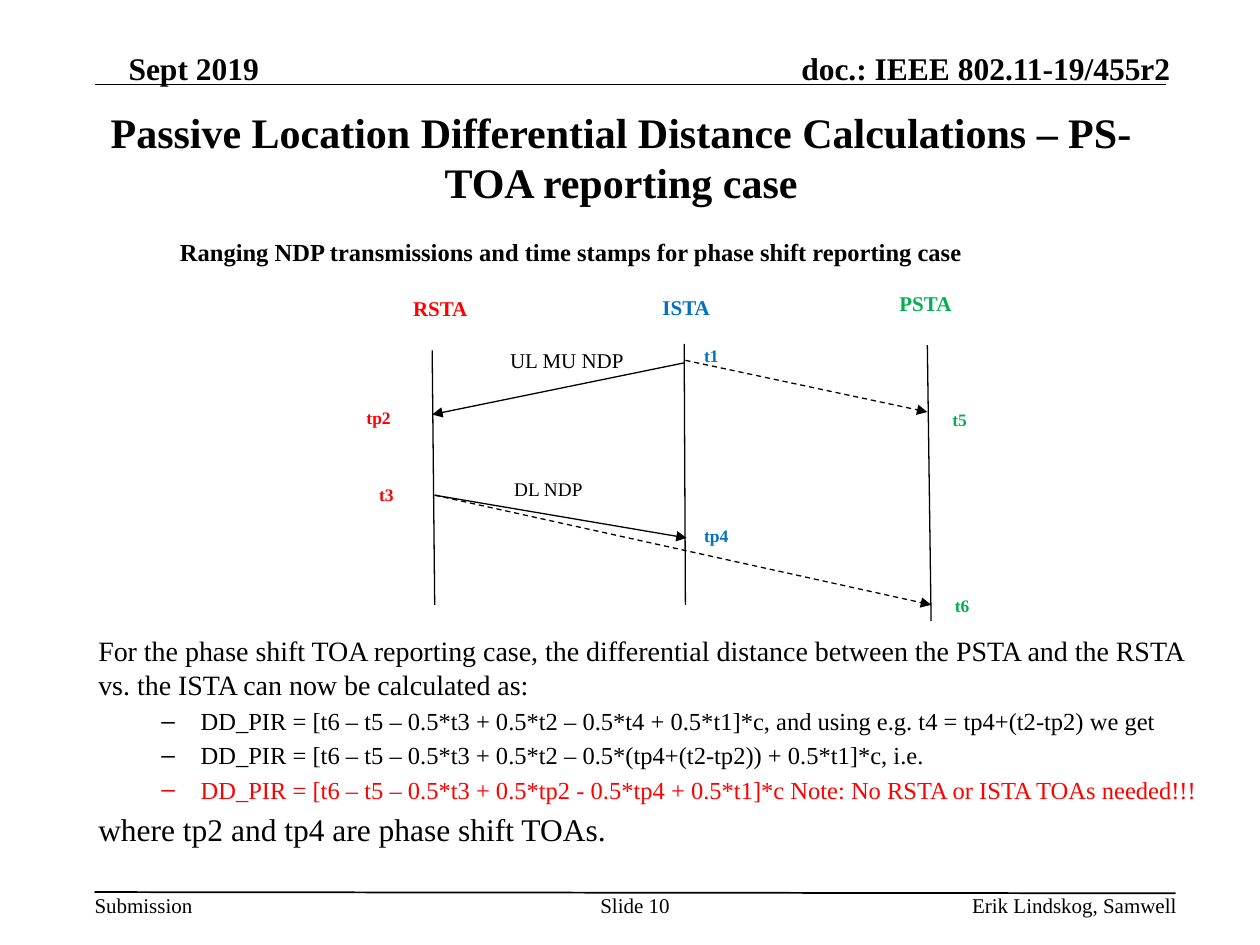
from dataclasses import dataclass

from lxml.etree import SubElement
from pptx import Presentation
from pptx.dml.color import RGBColor
from pptx.enum.dml import MSO_LINE_DASH_STYLE as Dash
from pptx.enum.shapes import MSO_CONNECTOR
from pptx.enum.text import MSO_ANCHOR as Anchor, MSO_AUTO_SIZE as AutoSize, PP_ALIGN as Align
from pptx.oxml.ns import qn
from pptx.util import Emu, Pt

PX = 9144  # EMU in one px, at 100 px to the inch


@dataclass(frozen=True)
class Theme:
    font: str = "Times New Roman"
    black: str = "000000"
    red: str = "FF0000"
    blue: str = "0070C0"
    green: str = "00B050"
    title: int = 24
    header: int = 18
    lead: int = 16
    item: int = 14
    label: int = 12
    note: int = 11
    stamp: int = 10


def write(para, words, *, size, color, bold=False, align=None):
    """Add one formatted run to a paragraph."""
    span = para.add_run()
    span.text = words
    font = span.font
    font.name, font.size, font.bold = Theme.font, Pt(size), bold
    font.color.rgb = RGBColor.from_string(color)
    if align is not None:
        para.alignment = align


class SlideBuilder:
    def __init__(self, deck, theme):
        self.theme = theme
        self.page = deck.slides.add_slide(deck.slide_layouts[1])

    def place(self, shape, at):
        shape.left, shape.top, shape.width, shape.height = (Emu(v * PX) for v in at)

    def title(self, at, words):
        box = self.page.shapes.title
        self.place(box, at)
        box.text_frame.vertical_anchor = Anchor.MIDDLE
        write(box.text_frame.paragraphs[0], words, size=self.theme.title,
              color=self.theme.black, bold=True, align=Align.CENTER)

    def body(self, at, rows):
        """Fill the body placeholder; rows are (level, words, size, color)."""
        box = self.page.placeholders[1]
        self.place(box, at)
        frame = box.text_frame
        frame.auto_size = AutoSize.NONE
        for index, (level, words, size, color) in enumerate(rows):
            para = frame.add_paragraph() if index else frame.paragraphs[0]
            para.level = level
            if level == 0:
                props = para._p.get_or_add_pPr()
                props.set("marL", "0")
                props.set("indent", "0")
                SubElement(props, qn("a:buNone"))
            write(para, words, size=size, color=color)

    def text(self, at, words, *, size, color=None, bold=False, align=Align.LEFT,
             wrap=True, insets=(10, 5, 10, 5), anchor=Anchor.TOP):
        box = self.page.shapes.add_textbox(*(Emu(v * PX) for v in at))
        frame = box.text_frame
        frame.word_wrap = wrap
        frame.vertical_anchor = anchor
        (frame.margin_left, frame.margin_top,
         frame.margin_right, frame.margin_bottom) = (Emu(v * PX) for v in insets)
        para = frame.paragraphs[0]
        write(para, words, size=size, color=color or self.theme.black, bold=bold, align=align)
        return para

    def right_tab(self, para, position):
        tabs = SubElement(para._p.get_or_add_pPr(), qn("a:tabLst"))
        SubElement(tabs, qn("a:tab"), pos=str(position * PX), algn="r")

    def line(self, start, end, *, width=0.75, dashed=False, arrow=False):
        line = self.page.shapes.add_connector(
            MSO_CONNECTOR.STRAIGHT, *(Emu(v * PX) for v in (*start, *end)))
        line.line.width = Pt(width)
        line.line.color.rgb = RGBColor.from_string(self.theme.black)
        if dashed:
            line.line.dash_style = Dash.DASH
        if arrow:
            SubElement(line.line._get_or_add_ln(), qn("a:tailEnd"), type="triangle")
        SubElement(line._element.spPr, qn("a:effectLst"))


def add_frame(slide, theme):
    """Draw the header and footer with their rules."""
    flush = (0, 0, 0, 0)
    slide.line((75, 67), (925, 67), width=1)
    slide.line((75, 708), (933, 709), width=1)
    header = slide.text((75, 39, 855, 30), "Sept 2019\tdoc.: IEEE 802.11-19/455r2",
                        size=theme.header, bold=True, insets=(27, 0, 0, 0),
                        anchor=Anchor.BOTTOM)
    slide.right_tab(header, 827)
    slide.text((75, 708, 78, 20), "Submission", size=theme.label, insets=flush, wrap=False)
    slide.text((475, 708, 58, 40), "Slide 10", size=theme.label, insets=flush,
               align=Align.CENTER)
    slide.text((586, 708, 348, 20), "Erik Lindskog, Samwell", size=theme.label,
               insets=flush, align=Align.RIGHT)


def add_sequence(slide, theme):
    """Draw the three stations, their messages and the time stamps."""
    slide.text((133, 183, 647, 34),
               "Ranging NDP transmissions and time stamps for phase shift reporting case",
               size=theme.item, bold=True, wrap=False)

    stations = (
        ("RSTA", theme.red, (318, 230), (343, 278), (345, 480),
         (("tp2", 281, 318), ("t3", 291, 379))),
        ("ISTA", theme.blue, (516, 229), (543, 273), (544, 480),
         (("t1", 549, 269), ("tp4", 549, 412))),
        ("PSTA", theme.green, (704, 226), (736, 274), (739, 493),
         (("t5", 746, 320), ("t6", 748, 467))),
    )
    for name, color, corner, top, bottom, stamps in stations:
        slide.text((*corner, 70, 30), name, size=theme.label, color=color, bold=True)
        slide.line(top, bottom)
        for stamp, left, upper in stamps:
            slide.text((left, upper, 52, 27), stamp, size=theme.stamp, color=color, bold=True)

    messages = (
        ((543, 288), (343, 329), False),
        ((544, 286), (736, 327), True),
        ((345, 393), (545, 427), False),
        ((345, 393), (739, 480), True),
    )
    for start, end, dashed in messages:
        slide.line(start, end, dashed=dashed, arrow=True)

    slide.text((395, 271, 119, 30), "UL MU NDP", size=theme.label)
    downlink = slide.text((399, 376, 89, 31), "DL NDP", size=theme.note, insets=(9, 5, 9, 5))
    downlink.line_spacing = 0.9
    downlink.space_before = Pt(10)


def main():
    deck = Presentation()
    deck.slide_width, deck.slide_height = Emu(1000 * PX), Emu(750 * PX)
    theme = Theme()
    slide = SlideBuilder(deck, theme)

    add_frame(slide, theme)
    slide.title((68, 84, 850, 81),
                "Passive Location Differential Distance Calculations – PS-TOA reporting case")
    add_sequence(slide, theme)
    slide.body((68, 498, 902, 193), (
        (0, "For the phase shift TOA reporting case, the differential distance between the "
            "PSTA and the RSTA vs. the ISTA can now be calculated as:", theme.lead, theme.black),
        (1, "DD_PIR = [t6 – t5 – 0.5*t3 + 0.5*t2 – 0.5*t4 + 0.5*t1]*c, and using e.g. "
            "t4 = tp4+(t2-tp2) we get", theme.item, theme.black),
        (1, "DD_PIR = [t6 – t5 – 0.5*t3 + 0.5*t2 – 0.5*(tp4+(t2-tp2)) + 0.5*t1]*c, i.e.",
         theme.item, theme.black),
        (1, "DD_PIR = [t6 – t5 – 0.5*t3 + 0.5*tp2 - 0.5*tp4 + 0.5*t1]*c "
            "Note: No RSTA or ISTA TOAs needed!!!", theme.item, theme.red),
        (0, "where tp2 and tp4 are phase shift TOAs.", theme.header, theme.black),
    ))
    deck.save("out.pptx")


if __name__ == "__main__":
    main()
